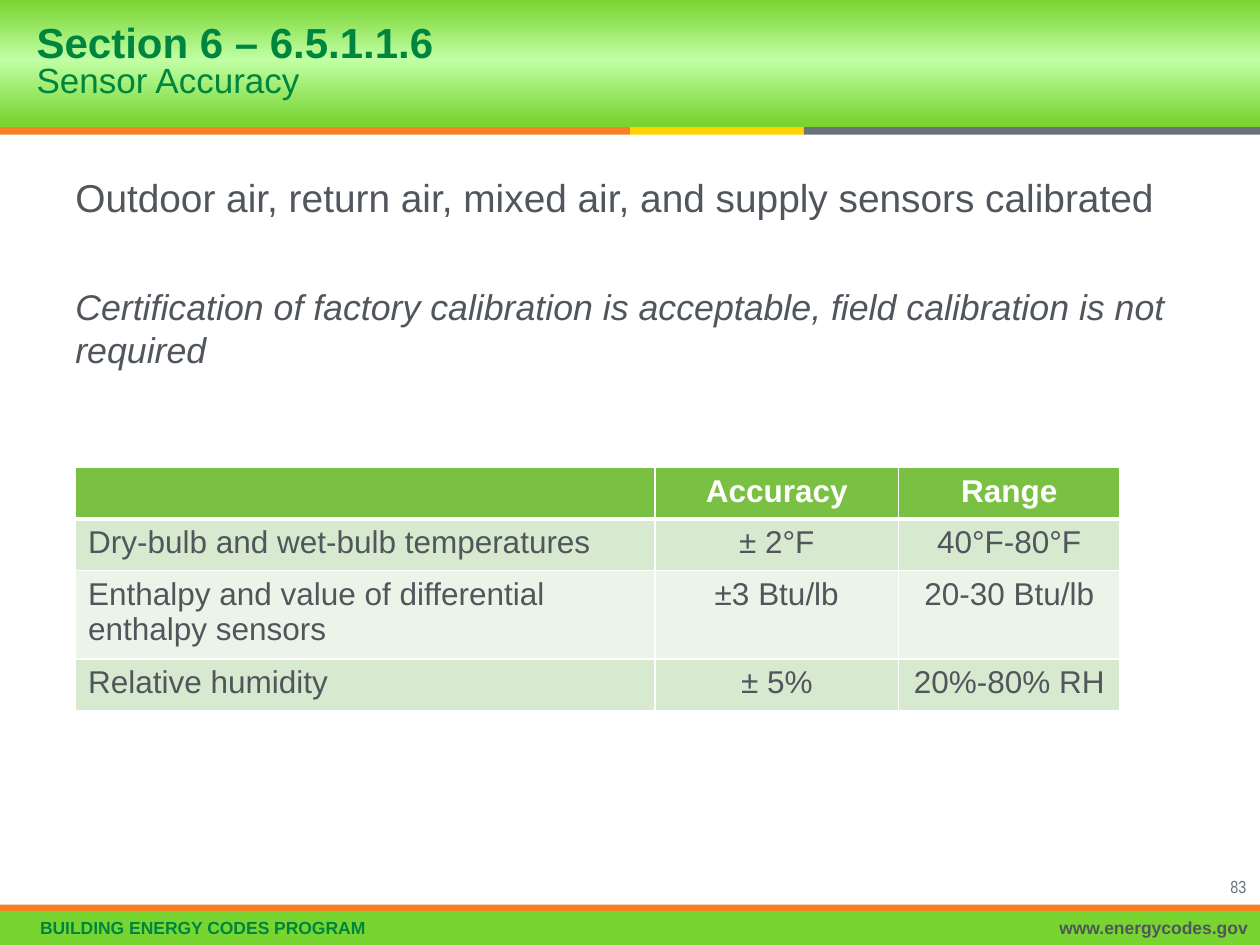
import pptx
import pptx.util
import pptx.dml.color
import pptx.enum.shapes
import pptx.enum.text
import pptx.oxml
import pptx.oxml.ns

Inches, Pt = pptx.util.Inches, pptx.util.Pt
ALIGN = pptx.enum.text.PP_ALIGN
MIDDLE = pptx.enum.text.MSO_ANCHOR.MIDDLE
NS = pptx.oxml.ns.nsdecls("a")
GREEN, LIME, ORANGE, GREY, TEXT = "00853F", "78D430", "F58025", "6A737B", "50565C"


def rgb(value):
    return pptx.dml.color.RGBColor.from_string(value)


def style(font, size, color, bold=False, name="Arial"):
    font.name, font.size, font.bold = name, Pt(size), bold
    font.color.rgb = rgb(color)


prs = pptx.Presentation()
prs.slide_width, prs.slide_height = Inches(10), Inches(7.5)
s = prs.slides.add_slide(prs.slide_layouts[5])

# Header band, colour strips and footer bars
for left, top, width, height, color in [
    (0, 0, 10, 1.01, LIME),
    (0, 1.01, 5, 0.06, ORANGE),
    (5, 1.01, 1.38, 0.06, "FFD200"),
    (6.38, 1.01, 3.62, 0.06, GREY),
    (0, 7.23, 10, 0.27, LIME),
    (0, 7.18, 10, 0.05, ORANGE),
]:
    sp = s.shapes.add_shape(pptx.enum.shapes.MSO_SHAPE.RECTANGLE, Inches(left),
                            Inches(top), Inches(width), Inches(height))
    sp.shadow.inherit = False
    sp.line.fill.background()
    sp.fill.solid()
    sp.fill.fore_color.rgb = rgb(color)
    if top == 0:
        # Three-stop vertical gradient
        stops = "".join(f'<a:gs pos="{pos}000"><a:srgbClr val="{c}"/></a:gs>'
                        for pos, c in [(0, LIME), (47, "C0FFA4"), (97, LIME)])
        solid = sp._element.spPr.find(pptx.oxml.ns.qn("a:solidFill"))
        solid.getparent().replace(solid, pptx.oxml.parse_xml(
            f'<a:gradFill {NS} rotWithShape="1"><a:gsLst>{stops}</a:gsLst>'
            '<a:lin ang="5400000" scaled="0"/></a:gradFill>'))

# Title, brought in front of the header band
title = s.shapes.title
s.shapes._spTree.append(title._element)
title.left, title.top = Inches(0.19), Inches(0.01)
title.width, title.height = Inches(9.24), Inches(0.99)
tf = title.text_frame
tf.auto_size = pptx.enum.text.MSO_AUTO_SIZE.NONE
tf.vertical_anchor = MIDDLE
p = tf.paragraphs[0]
p.alignment, p.line_spacing = ALIGN.LEFT, 0.8
r = p.add_run()
r.text = "Section 6 – 6.5.1.1.6"
style(r.font, 24, GREEN, True)
p.add_line_break()
r = p.add_run()
r.text = "Sensor Accuracy"
style(r.font, 20, GREEN)

# Body text
tf = s.shapes.add_textbox(Inches(0.5), Inches(1.33), Inches(9), Inches(1.62)).text_frame
tf.word_wrap = True
p = tf.paragraphs[0]
p.text = "Outdoor air, return air, mixed air, and supply sensors calibrated"
style(p.font, 22.2, TEXT)
p = tf.add_paragraph()
p.text = "Certification of factory calibration is acceptable, field calibration is not required"
p.space_before = Pt(37)
style(p.font, 20.4, TEXT)
p.font.italic = True

# Sensor table
rows = [
    ("", "Accuracy", "Range"),
    ("Dry-bulb and wet-bulb temperatures", "± 2°F", "40°F-80°F"),
    ("Enthalpy and value of differential enthalpy sensors", "±3 Btu/lb", "20-30 Btu/lb"),
    ("Relative humidity", "± 5%", "20%-80% RH"),
]
fills = ["7AC143", "D7E9CF", "ECF4E9", "D7E9CF"]
table = s.shapes.add_table(4, 3, Inches(0.6), Inches(3.71), Inches(8.29), Inches(1.89)).table
for col, width in zip(table.columns, [4.6, 1.93, 1.76]):
    col.width = Inches(width)
for row, height in zip(table.rows, [0.41, 0.41, 0.66, 0.41]):
    row.height = Inches(height)
for i, texts in enumerate(rows):
    for j, text in enumerate(texts):
        cell = table.cell(i, j)
        p = cell.text_frame.paragraphs[0]
        p.text = text
        p.alignment = ALIGN.CENTER if j else ALIGN.LEFT
        style(p.font, 18, TEXT if i else "FFFFFF", i == 0)
        # White borders, thicker between the header and the first row
        tcPr = cell._tc.get_or_add_tcPr()
        for side in "LRTB":
            thick = (i, side) in [(0, "B"), (1, "T")]
            tcPr.append(pptx.oxml.parse_xml(
                f'<a:ln{side} {NS} w="{Pt(3 if thick else 1)}"><a:solidFill>'
                f'<a:srgbClr val="FFFFFF"/></a:solidFill></a:ln{side}>'))
        cell.fill.solid()
        cell.fill.fore_color.rgb = rgb(fills[i])

# Footer texts and page number
for text, left, top, width, align, color, bold, name in [
    ("BUILDING ENERGY CODES PROGRAM", 0.22, 7.23, 5, ALIGN.LEFT, GREEN, True, "Arial"),
    ("www.energycodes.gov", 5.99, 7.23, 4.01, ALIGN.RIGHT, TEXT, True, "Arial"),
    ("83", 9.28, 6.9, 0.71, ALIGN.RIGHT, GREY, False, "Arial Narrow"),
]:
    tf = s.shapes.add_textbox(Inches(left), Inches(top), Inches(width), Inches(0.27)).text_frame
    tf.word_wrap = True
    tf.vertical_anchor = MIDDLE
    p = tf.paragraphs[0]
    p.text, p.alignment = text, align
    style(p.font, 10, color, bold, name)

prs.save("out.pptx")
